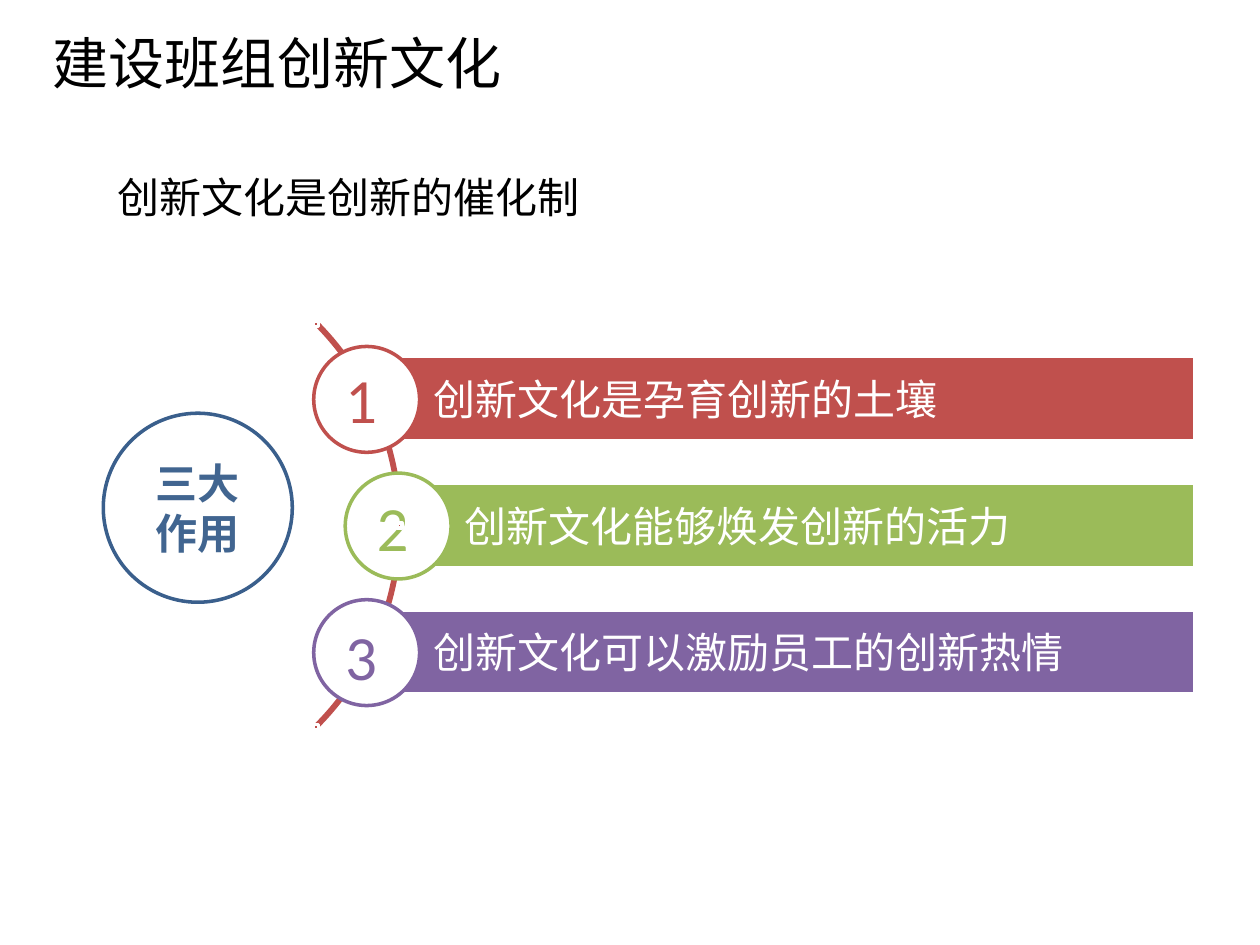
from pptx import Presentation
from pptx.dml.color import RGBColor
from pptx.enum.shapes import MSO_SHAPE as Shape
from pptx.enum.text import MSO_ANCHOR as Anchor, MSO_AUTO_SIZE as AutoSize, PP_ALIGN as Align
from pptx.oxml.ns import qn
from pptx.util import Inches, Pt
from lxml import etree

CJK_FONT = "Noto Sans CJK SC"
RED, GREEN, PURPLE = "C0504D", "9BBB59", "8064A2"


def write(holder, text, size, color, font="Calibri", bold=False, align=Align.LEFT):
    """Put one formatted paragraph into a shape and return the paragraph."""
    holder.text_frame.text = text
    paragraph = holder.text_frame.paragraphs[0]
    paragraph.alignment = align
    run = paragraph.runs[0]
    run.font.size = Pt(size)
    run.font.bold = bold
    run.font.color.rgb = RGBColor.from_string(color)
    run.font.name = font
    etree.SubElement(run.font._element, qn("a:ea"), typeface=CJK_FONT)
    return paragraph


def draw(kind, left, top, width, height, fill, line):
    shape = slide.shapes.add_shape(
        kind, Inches(left), Inches(top), Inches(width), Inches(height))
    shape.shadow.inherit = False
    if fill:
        shape.fill.solid()
        shape.fill.fore_color.rgb = RGBColor.from_string(fill)
    else:
        shape.fill.background()
    shape.line.color.rgb = RGBColor.from_string(line)
    shape.line.width = Pt(2)
    return shape


prs = Presentation()
prs.slide_width, prs.slide_height = Inches(10), Inches(7.5)
slide = prs.slides.add_slide(prs.slide_layouts[1])

# Title and subtitle line
title, body = slide.placeholders
title.left, title.top, title.width, title.height = Inches(0), Inches(0), Inches(10), Inches(0.98)
title.text_frame.vertical_anchor = Anchor.MIDDLE
heading = write(title, "建设班组创新文化", 32, "000000", CJK_FONT)
heading._p.get_or_add_pPr().set("indent", str(Inches(0.32)))

body.left, body.top, body.width, body.height = Inches(0.83), Inches(1.31), Inches(8.98), Inches(0.47)
body.text_frame.auto_size = AutoSize.NONE
lead = write(body, "创新文化是创新的催化制", 24, "000000")
lead_props = lead._p.get_or_add_pPr()
lead_props.set("marL", "0")
lead_props.set("indent", "0")
etree.SubElement(lead_props, qn("a:buNone"))

# Arc behind the three effects
arc = draw(Shape.BLOCK_ARC, -1.37, 1.89, 4.55, 4.55, None, RED)
for index, value in enumerate((189, 27, 0.004)):
    arc.adjustments[index] = value

# Bars with their numbered circles
right_edge, step, circle_size = 9.48, 1.005, 0.84
effects = [
    ("创新文化是孕育创新的土壤", 2.91, RED),
    ("创新文化能够焕发创新的活力", 3.16, GREEN),
    ("创新文化可以激励员工的创新热情", 2.91, PURPLE),
]
for row, (effect, left, color) in enumerate(effects):
    top = 2.83 + row * step
    bar = draw(Shape.RECTANGLE, left, top, right_edge - left, 0.67, color, "FFFFFF")
    frame = bar.text_frame
    frame.vertical_anchor = Anchor.MIDDLE
    frame.margin_left = Inches(0.53)
    frame.margin_top = frame.margin_right = frame.margin_bottom = Inches(0.07)
    write(bar, effect, 24, "FFFFFF")

    draw(Shape.OVAL, left - circle_size / 2, top - 0.08, circle_size, circle_size, "FFFFFF", color)
    number = slide.shapes.add_textbox(
        Inches(left - 0.27), Inches(2.81 + row * 1.02), Inches(0.55), Inches(0.71))
    number.text_frame.word_wrap = True
    write(number, str(row + 1), 36, color)

# Small squares at the ends and the middle of the arc
for left, top in ((2.49, 2.55), (3.15, 4.15), (2.49, 5.75)):
    draw(Shape.RECTANGLE, left, top, 0.04, 0.04, RED, "FFFFFF")

hub = draw(Shape.OVAL, 0.82, 3.28, 1.5, 1.5, "FFFFFF", "3A5F8C")
hub.text_frame.vertical_anchor = Anchor.MIDDLE
write(hub, "三大作用", 24, "416590", CJK_FONT, True, Align.CENTER)

prs.save("out.pptx")
